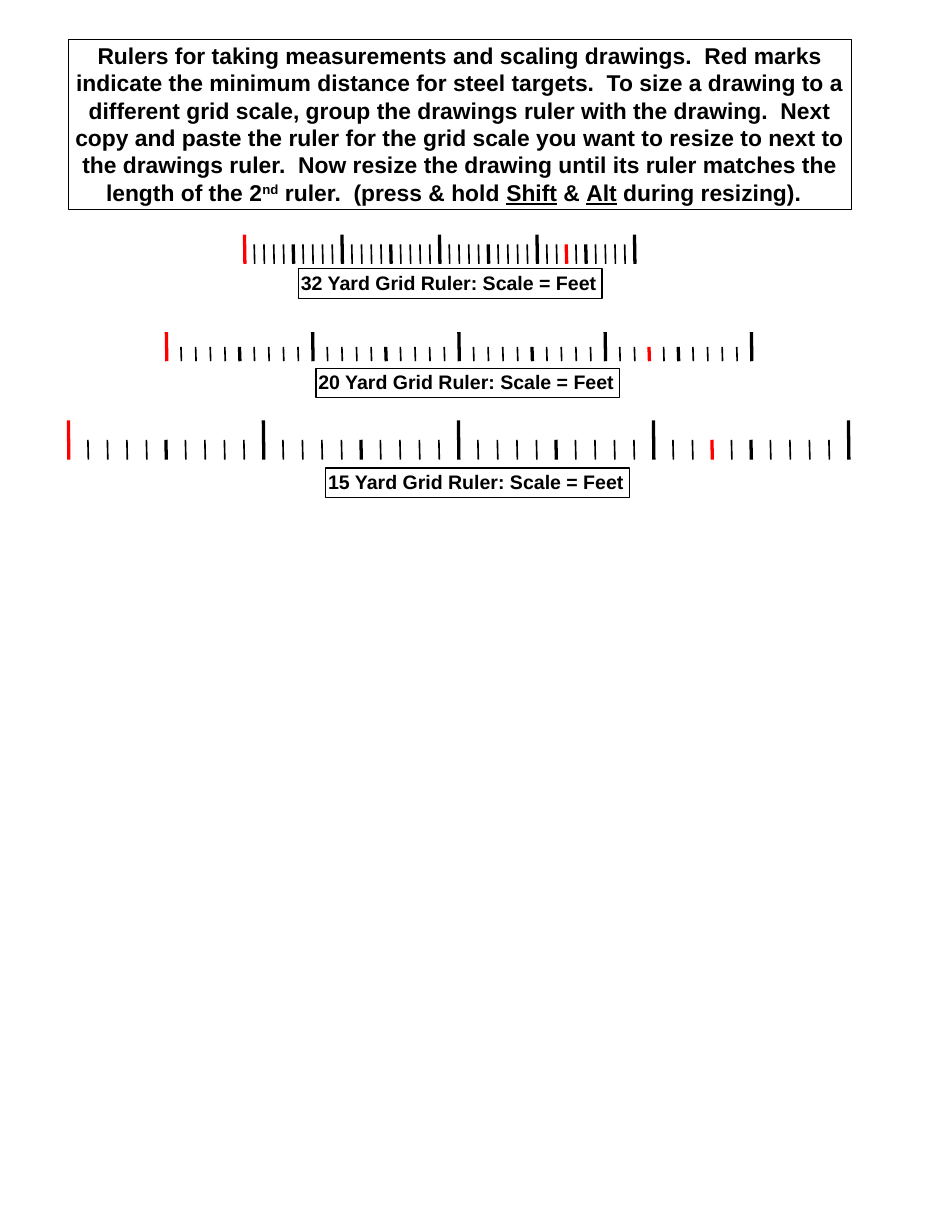
from pptx import Presentation
from pptx.dml.color import RGBColor
from pptx.enum.shapes import MSO_CONNECTOR, MSO_SHAPE
from pptx.enum.text import MSO_ANCHOR, MSO_AUTO_SIZE, PP_ALIGN
from pptx.oxml.ns import qn
from pptx.util import Cm, Pt
from lxml import etree

STRAIGHT = MSO_CONNECTOR.STRAIGHT
RECTANGLE = MSO_SHAPE.RECTANGLE
TOP = MSO_ANCHOR.TOP
FIT_SHAPE = MSO_AUTO_SIZE.SHAPE_TO_FIT_TEXT
LEFT, CENTER = PP_ALIGN.LEFT, PP_ALIGN.CENTER

BLACK, RED, WHITE = "000000", "FF0000", "FFFFFF"
FONT = "Arial"
BLANK_LAYOUT = 6
FEET = 40
FEET_PER_MAJOR = 10
FEET_PER_HALF = 5
RED_FEET = (0, 33)  # zero mark and minimum distance for steel targets
TICK_SLANT = 0.01

# yards, left, length, major top, minor top, bottom, label left, label top (cm)
RULERS = [
    (15, 1.48, 16.88, 9.1, 9.52, 9.95, 7.05, 10.13),
    (20, 3.6, 12.66, 7.19, 7.51, 7.82, 6.84, 7.97),
    (32, 5.29, 8.44, 5.08, 5.29, 5.71, 6.46, 5.82),
]

# text, run style
INSTRUCTIONS = [
    ("Rulers for taking measurements and scaling drawings.  Red marks indicate "
     "the minimum distance for steel targets.  To size a drawing to a different "
     "grid scale, group the drawings ruler with the drawing.  Next copy and paste "
     "the ruler for the grid scale you want to resize to next to the drawings "
     "ruler.  Now resize the drawing until its ruler matches the length of the 2",
     "plain"),
    ("nd", "superscript"),
    (" ruler.  (press & hold ", "plain"),
    ("Shift", "underline"),
    (" & ", "plain"),
    ("Alt", "underline"),
    (" during resizing).  ", "plain"),
]


def color(hex_value):
    return RGBColor.from_string(hex_value)


def add_tick(group, x, top, bottom, hex_value, width):
    tick = group.shapes.add_connector(
        STRAIGHT, Cm(x), Cm(top), Cm(x + TICK_SLANT), Cm(bottom))
    tick.line.color.rgb = color(hex_value)
    tick.line.width = Pt(width)
    etree.SubElement(tick._element.spPr, qn("a:effectLst"))


def add_ruler(slide, left, length, major_top, minor_top, bottom):
    group = slide.shapes.add_group_shape()
    for foot in range(FEET + 1):
        is_red = foot in RED_FEET
        top = minor_top if foot % FEET_PER_MAJOR else major_top
        is_thick = is_red or foot % FEET_PER_HALF == 0
        add_tick(group, left + foot * length / FEET, top, bottom,
                 RED if is_red else BLACK, 2 if is_thick else 1)


def add_run(paragraph, text, size, style):
    run = paragraph.add_run()
    run.text = text
    font = run.font
    font.name, font.size, font.bold = FONT, Pt(size), True
    font.color.rgb = color(BLACK)
    if style == "underline":
        font.underline = True
    elif style == "superscript":
        font._element.set("baseline", "30000")


def add_framed_text(slide, left, top, width, height, runs, size, alignment, wrap):
    shape = slide.shapes.add_shape(RECTANGLE, Cm(left), Cm(top), Cm(width), Cm(height))
    shape.shadow.inherit = False
    shape.fill.solid()
    shape.fill.fore_color.rgb = color(WHITE)
    shape.line.color.rgb = color(BLACK)
    shape.line.width = Pt(0.75)
    frame = shape.text_frame
    frame.margin_left = frame.margin_right = Cm(0.05)
    frame.margin_top = frame.margin_bottom = Cm(0.05)
    frame.vertical_anchor = TOP
    frame.word_wrap = wrap
    frame.auto_size = FIT_SHAPE
    paragraph = frame.paragraphs[0]
    paragraph.alignment = alignment
    for text, style in runs:
        add_run(paragraph, text, size, style)


def main():
    presentation = Presentation()
    presentation.slide_width, presentation.slide_height = Cm(20.32), Cm(26.67)
    slide = presentation.slides.add_slide(presentation.slide_layouts[BLANK_LAYOUT])
    for yards, left, length, major_top, minor_top, bottom, label_left, label_top in RULERS:
        add_ruler(slide, left, length, major_top, minor_top, bottom)
        label = [(f"{yards} Yard Grid Ruler: Scale = Feet", "plain")]
        add_framed_text(slide, label_left, label_top, 6.57, 0.64, label, 12, LEFT, False)
    add_framed_text(slide, 1.49, 0.85, 16.93, 3.68, INSTRUCTIONS, 14, CENTER, True)
    presentation.save("out.pptx")


if __name__ == "__main__":
    main()
